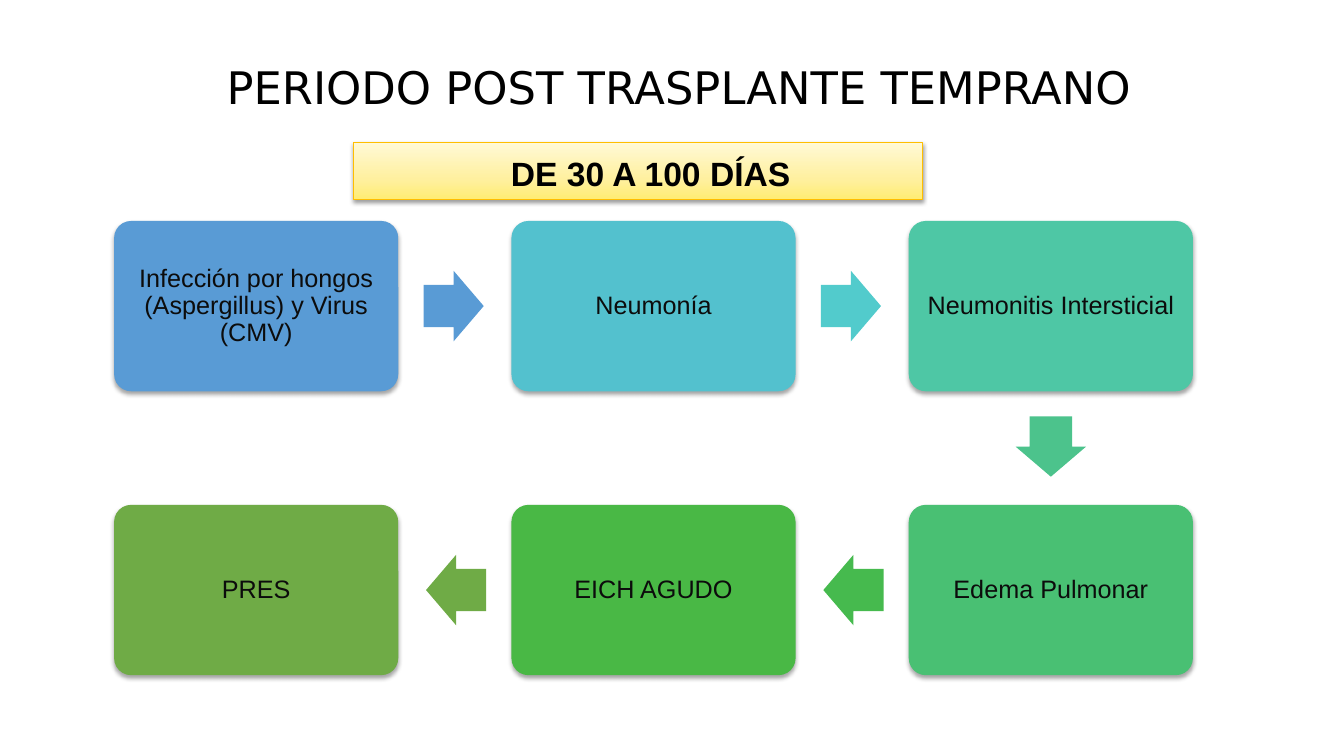
from copy import deepcopy

from lxml import etree
from pptx import Presentation
from pptx.dml.color import RGBColor
from pptx.enum import shapes, text
from pptx.oxml.ns import qn
from pptx.util import Pt

BLACK = RGBColor(0x00, 0x00, 0x00)
CARD_TEXT = RGBColor(0x0C, 0x0C, 0x0C)
GOLD_LINE = RGBColor(0xFF, 0xBE, 0x00)
GOLD_STOPS = [(0, RGBColor(0xFF, 0xED, 0x74)),
              (0.35, RGBColor(0xFF, 0xF0, 0x9F)),
              (1, RGBColor(0xFF, 0xF9, 0xD6))]
BLUE = RGBColor(0x59, 0x9B, 0xD5)
CYAN = RGBColor(0x53, 0xC1, 0xCE)
TURQUOISE = RGBColor(0x52, 0xCB, 0xCC)
TEAL = RGBColor(0x4E, 0xC7, 0xA5)
SEA_GREEN = RGBColor(0x4C, 0xC3, 0x8C)
JADE = RGBColor(0x49, 0xC0, 0x73)
EMERALD = RGBColor(0x46, 0xBA, 0x4E)
GREEN = RGBColor(0x49, 0xB8, 0x45)
OLIVE = RGBColor(0x6F, 0xAB, 0x46)

# Wording, column, row, card colour, colour of the arrow that leaves it, its turn
STEPS = [
    ("Infección por hongos (Aspergillus) y Virus (CMV)", 0, 0, BLUE, BLUE, 0),
    ("Neumonía", 1, 0, CYAN, TURQUOISE, 0),
    ("Neumonitis Intersticial", 2, 0, TEAL, SEA_GREEN, 90),
    ("Edema Pulmonar", 2, 1, JADE, EMERALD, 180),
    ("EICH AGUDO", 1, 1, GREEN, OLIVE, 180),
    ("PRES", 0, 1, OLIVE, None, 0),
]
DIRECTIONS = {0: (1, 0), 90: (0, 1), 180: (-1, 0)}
CARD_WIDTH, CARD_HEIGHT = 203, 121.7
ARROW_LENGTH, ARROW_WIDTH, ARROW_GAP = 43, 50.4, 18


def write(box, words, size, font="Arial", color=BLACK, bold=False,
          align=text.PP_ALIGN.CENTER, anchor=text.MSO_ANCHOR.MIDDLE,
          insets=(7.2, 3.6), hanging=0):
    frame = box.text_frame
    frame.word_wrap = True
    frame.vertical_anchor = anchor
    frame.margin_left = frame.margin_right = Pt(insets[0])
    frame.margin_top = frame.margin_bottom = Pt(insets[1])
    para = frame.paragraphs[0]
    para.alignment = align
    para.line_spacing = 0.9
    if hanging:
        properties = para._p.get_or_add_pPr()
        properties.set("marL", str(Pt(2 * hanging)))
        properties.set("indent", str(-Pt(hanging)))
    span = para.add_run()
    span.text = words
    span.font.name = font
    span.font.size = Pt(size)
    span.font.bold = bold
    span.font.color.rgb = color


def add_plain_shape(page, kind, left, top, width, height):
    shape = page.shapes.add_shape(kind, Pt(left), Pt(top), Pt(width), Pt(height))
    shape.shadow.inherit = False
    shape.line.fill.background()
    return shape


def add_shadow(shape, opacity, distance):
    effects = shape._element.spPr.find(qn("a:effectLst"))
    shadow = etree.SubElement(effects, qn("a:outerShdw"), blurRad=str(Pt(3.1)),
                              dist=str(Pt(distance)), dir="5400000", rotWithShape="0")
    color = etree.SubElement(shadow, qn("a:srgbClr"), val="000000")
    etree.SubElement(color, qn("a:alpha"), val=str(opacity * 1000))


def add_title(page, left, top, width, height):
    box = page.shapes.add_textbox(Pt(left), Pt(top), Pt(width), Pt(height))
    write(box, "PERIODO POST TRASPLANTE TEMPRANO", 32, font="DejaVu Sans",
          align=text.PP_ALIGN.LEFT)


def add_banner(page, left, top, width, height):
    banner = add_plain_shape(page, shapes.MSO_SHAPE.RECTANGLE, left, top, width, height)
    banner.line.color.rgb = GOLD_LINE
    banner.line.width = Pt(0.75)
    # A new gradient has two stops; a third is added
    banner.fill.gradient()
    banner.fill.gradient_angle = 90
    stop_list = banner._element.spPr.find(qn("a:gradFill")).find(qn("a:gsLst"))
    stop_list.append(deepcopy(stop_list[0]))
    for stop, (position, color) in zip(banner.fill.gradient_stops, GOLD_STOPS):
        stop.position = position
        stop.color.rgb = color
    add_shadow(banner, 38, 1.6)
    write(banner, "DE 30 A 100 DÍAS", 24, bold=True,
          anchor=text.MSO_ANCHOR.BOTTOM, hanging=18)


def add_card(page, left, top, words, color):
    card = add_plain_shape(page, shapes.MSO_SHAPE.ROUNDED_RECTANGLE,
                           left, top, CARD_WIDTH, CARD_HEIGHT)
    card.adjustments[0] = 0.1
    card.fill.solid()
    card.fill.fore_color.rgb = color
    add_shadow(card, 35, 1.8)
    write(card, words, 18, color=CARD_TEXT, insets=(5, 5))


def add_arrow(page, card_left, card_top, color, turn):
    across, down = DIRECTIONS[turn]
    reach = ARROW_GAP + ARROW_LENGTH / 2
    center_x = card_left + CARD_WIDTH / 2 + across * (CARD_WIDTH / 2 + reach)
    center_y = card_top + CARD_HEIGHT / 2 + down * (CARD_HEIGHT / 2 + reach)
    arrow = add_plain_shape(page, shapes.MSO_SHAPE.RIGHT_ARROW,
                            center_x - ARROW_LENGTH / 2, center_y - ARROW_WIDTH / 2,
                            ARROW_LENGTH, ARROW_WIDTH)
    arrow.adjustments[0] = 0.6
    arrow.adjustments[1] = 0.5
    arrow.rotation = turn
    arrow.fill.solid()
    arrow.fill.fore_color.rgb = color


def add_flow(page, left, top, width, height):
    column_step = (width - CARD_WIDTH) / 2
    row_step = height - CARD_HEIGHT
    for words, column, row, card_color, arrow_color, turn in STEPS:
        card_left = left + column * column_step
        card_top = top + row * row_step
        add_card(page, card_left, card_top, words, card_color)
        if arrow_color is not None:
            add_arrow(page, card_left, card_top, arrow_color, turn)


def main():
    deck = Presentation()
    deck.slide_width, deck.slide_height = Pt(960), Pt(540)
    page = deck.slides.add_slide(deck.slide_layouts[6])
    add_title(page, 154.8, 25.9, 684, 76.3)
    add_banner(page, 252.5, 101.7, 406.5, 40.5)
    add_flow(page, 81.5, 157.8, 770.6, 324.5)
    deck.save("out.pptx")


if __name__ == "__main__":
    main()
